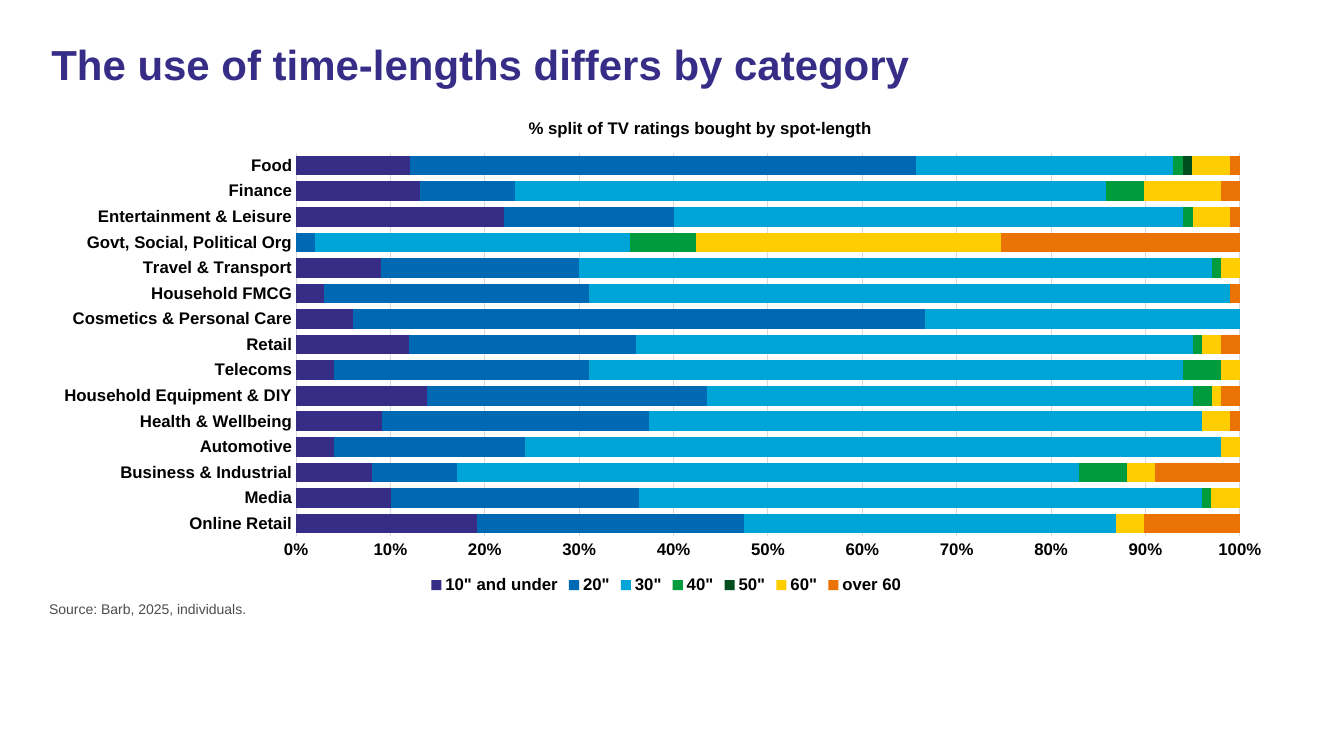
"""Build a slide with a stacked bar chart of TV spot-lengths by category."""
from dataclasses import dataclass

from pptx import Presentation
from pptx.chart.data import CategoryChartData as Data
from pptx.dml.color import RGBColor as RGB
from pptx.enum.chart import XL_CHART_TYPE as Kind, XL_LEGEND_POSITION as Side, XL_TICK_MARK as Tick
from pptx.enum.text import MSO_ANCHOR as Anchor, MSO_AUTO_SIZE as Auto, PP_ALIGN as Align
from pptx.oxml import parse_xml
from pptx.oxml.ns import nsdecls
from pptx.util import Cm, Pt


@dataclass
class Theme:
    face: str = "Arial"
    head: str = "372D87"
    ink: str = "000000"
    grey: str = "4D4D4D"
    rule: str = "D9D9D9"
    big: int = 30
    mid: int = 12
    small: int = 10


theme = Theme()


def style(font, size, color, bold):
    look = {"name": theme.face, "size": Pt(size), "bold": bold}
    for key, value in look.items():
        setattr(font, key, value)
    font.color.rgb = RGB.from_string(color)


def place(part, index, **spots):
    for old in part.xpath("c:layout"):
        part.remove(old)
    inner = '<c:layoutTarget val="inner"/>' if "w" in spots else ""
    modes = "".join(f'<c:{key}Mode val="edge"/>' for key in spots if key in "xy")
    sizes = "".join(f'<c:{key} val="{value}"/>' for key, value in spots.items())
    part.insert(index, parse_xml(
        f'<c:layout {nsdecls("c")}><c:manualLayout>{inner}{modes}{sizes}'
        "</c:manualLayout></c:layout>"))


deck = Presentation()
deck.slide_width, deck.slide_height = Cm(33.87), Cm(19.05)
slide = deck.slides.add_slide(deck.slide_layouts[5])

title = slide.shapes.title
source = slide.shapes.add_textbox(Cm(0.99), Cm(15.01), Cm(31.98), Cm(0.84))
box = {"left": Cm(1.04), "top": Cm(0.99), "width": Cm(31.5), "height": Cm(2.84)}
for key, value in box.items():
    setattr(title, key, value)

texts = [
    (title, "The use of time-lengths differs by category", theme.big, theme.head, True, 0.9),
    (source, "Source: Barb, 2025, individuals.", theme.small, theme.grey, False, 1.0),
]
for shape, words, size, color, bold, space in texts:
    frame = shape.text_frame
    frame.text = words
    frame.word_wrap = True
    frame.auto_size = Auto.NONE
    frame.vertical_anchor = Anchor.TOP
    line = frame.paragraphs[0]
    line.alignment = Align.LEFT
    line.line_spacing = space
    style(line.runs[0].font, size, color, bold)

lengths = [
    ('10" and under', "372D87"), ('20"', "0069B4"), ('30"', "00A5D7"), ('40"', "009B3C"),
    ('50"', "004E1E"), ('60"', "FFCD00"), ("over 60", "EB7305"),
]
splits = {
    "Online Retail": (19, 28, 39, 0, None, 3, 10),
    "Media": (10, 26, 59, 1, 0, 3, 0),
    "Business & Industrial": (8, 9, 66, 5, 0, 3, 9),
    "Automotive": (4, 20, 73, 0, None, 2, 0),
    "Health & Wellbeing": (9, 28, 58, 0, None, 3, 1),
    "Household Equipment & DIY": (14, 30, 52, 2, None, 1, 2),
    "Telecoms": (4, 27, 63, 4, None, 2, 0),
    "Retail": (12, 24, 59, 1, None, 2, 2),
    "Cosmetics & Personal Care": (6, 60, 33, 0, None, 0, 0),
    "Household FMCG": (3, 28, 68, 0, None, 0, 1),
    "Travel & Transport": (9, 21, 67, 1, None, 2, 0),
    "Govt, Social, Political Org": (0, 2, 33, 7, 0, 32, 25),
    "Entertainment & Leisure": (22, 18, 54, 1, 0, 4, 1),
    "Finance": (13, 10, 62, 4, 0, 8, 2),
    "Food": (12, 53, 27, 1, 1, 4, 1),
}
data = Data()
data.categories = list(splits)
for (name, color), values in zip(lengths, zip(*splits.values())):
    data.add_series(name, values)

chart = slide.shapes.add_chart(
    Kind.BAR_STACKED_100, Cm(0.99), Cm(2.51), Cm(31.42), Cm(12.67), data).chart
style(chart.font, theme.mid, theme.ink, True)
place(chart._chartSpace.chart.plotArea, 0, x=0.206, y=0.106, w=0.757, h=0.763)

plot = chart.plots[0]
plot.gap_width, plot.overlap = 30, 100
plot.vary_by_categories = False
for series, (name, color) in zip(plot.series, lengths):
    series.format.fill.solid()
    series.format.fill.fore_color.rgb = RGB.from_string(color)
    series.invert_if_negative = False

head = chart.chart_title
head.text_frame.text = "% split of TV ratings bought by spot-length"
style(head.text_frame.paragraphs[0].runs[0].font, theme.mid, theme.ink, True)
place(head._element, 1, x=0.39, y=0.03)

chart.has_legend = True
legend = chart.legend
legend.position = Side.BOTTOM
legend.include_in_layout = False
style(legend.font, theme.mid, theme.ink, True)
place(legend._element, 1, x=0.31, y=0.94)

cats, scale = chart.category_axis, chart.value_axis
for axis in (cats, scale):
    axis.major_tick_mark = axis.minor_tick_mark = Tick.NONE
    style(axis.tick_labels.font, theme.mid, theme.ink, True)
scale.has_major_gridlines = True
scale.major_unit = 0.1
scale.tick_labels.number_format = "0%"
scale.tick_labels.number_format_is_linked = False
scale.format.line.fill.background()
for rule in (cats.format.line, scale.major_gridlines.format.line):
    rule.color.rgb = RGB.from_string(theme.rule)
    rule.width = Pt(0.75)

deck.save("out.pptx")
